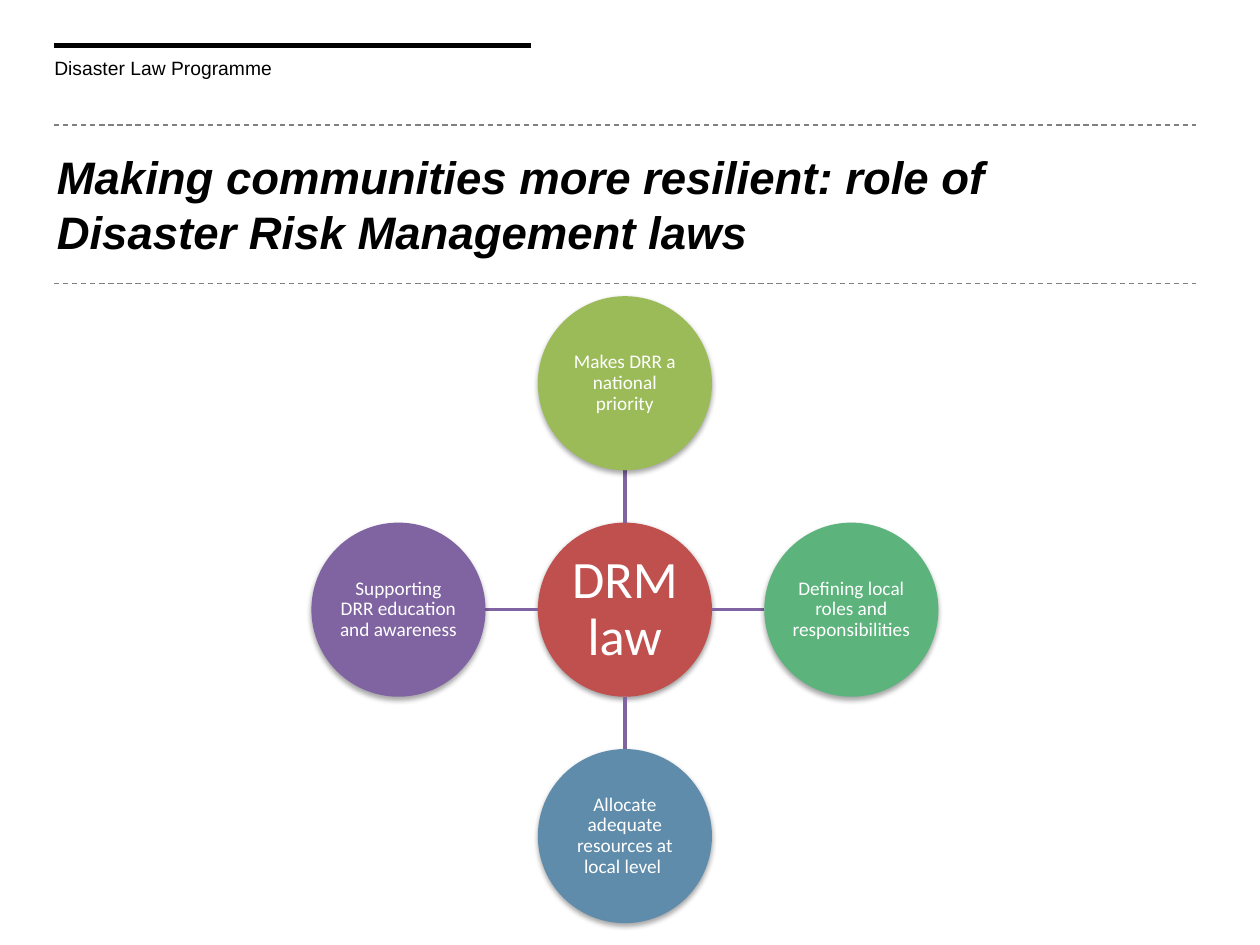
from lxml.etree import SubElement
from pptx import Presentation
from pptx.dml.color import RGBColor
from pptx.enum.dml import MSO_LINE
from pptx.enum.shapes import MSO_CONNECTOR, MSO_SHAPE
from pptx.enum.text import MSO_ANCHOR, PP_ALIGN
from pptx.oxml.ns import qn
from pptx.util import Pt

PROGRAMME = "Disaster Law Programme"
TITLE = "Making communities more resilient: role of Disaster Risk Management laws"
HUB = ("DRM law", "C0504D")
SPOKES = [
    ("Makes DRR a national priority", "9BBB59", (0, -1)),
    ("Defining local roles and responsibilities ", "5CB37C", (1, 0)),
    ("Allocate adequate resources at local level ", "608CAB", (0, 1)),
    ("Supporting DRR education and awareness", "8064A2", (-1, 0)),
]
RULES = [
    (26, 303.2, "000000", 3, None),
    (162.2, 683.3, "808080", 0.75, MSO_LINE.DASH),
    (71.4, 683.3, "808080", 0.75, MSO_LINE.DASH),
]
LEFT = 31
CENTER_X, CENTER_Y = 357.1, 348.4
DIAMETER, STEP = 99.5, 129.4


def color(value):
    """Turn a hex string into a colour."""
    return RGBColor.from_string(value)


def add_line(slide, start, end, stroke, width, dash=None):
    """Draw a straight line without a shadow."""
    line = slide.shapes.add_connector(
        MSO_CONNECTOR.STRAIGHT, *(Pt(value) for value in (*start, *end)))
    line.line.color.rgb = color(stroke)
    line.line.width = Pt(width)
    if dash is not None:
        line.line.dash_style = dash
    SubElement(line._element.spPr, qn("a:effectLst"))


def write(shape, text, size, font, ink, insets, anchor):
    """Put one styled run into a shape and return its paragraph."""
    frame = shape.text_frame
    frame.word_wrap = True
    frame.vertical_anchor = anchor
    frame.margin_left = frame.margin_right = Pt(insets[0])
    frame.margin_top = frame.margin_bottom = Pt(insets[1])
    para = frame.paragraphs[0]
    span = para.add_run()
    span.text = text
    span.font.size = Pt(size)
    span.font.name = font
    span.font.color.rgb = color(ink)
    return para


def add_shadow(shape, blur, distance, opacity):
    """Give a shape a soft shadow that falls straight down."""
    shape.shadow.inherit = False
    effects = shape._element.spPr.find(qn("a:effectLst"))
    shadow = SubElement(effects, qn("a:outerShdw"), blurRad=str(Pt(blur)),
                        dist=str(Pt(distance)), dir="5400000", rotWithShape="0")
    black = SubElement(shadow, qn("a:srgbClr"), val="000000")
    SubElement(black, qn("a:alpha"), val=str(opacity * 1000))


def add_circle(slide, x, y, text, fill, size, inset, distance, opacity):
    """Draw a labelled circle around a centre point."""
    circle = slide.shapes.add_shape(
        MSO_SHAPE.OVAL, Pt(x - DIAMETER / 2), Pt(y - DIAMETER / 2),
        Pt(DIAMETER), Pt(DIAMETER))
    circle.fill.solid()
    circle.fill.fore_color.rgb = color(fill)
    circle.line.fill.background()
    add_shadow(circle, 3.1, distance, opacity)
    para = write(circle, text, size, "Calibri", "FFFFFF", (inset, inset),
                 MSO_ANCHOR.MIDDLE)
    para.alignment = PP_ALIGN.CENTER
    para.line_spacing = 0.9


def main():
    """Build the slide and save it."""
    deck = Presentation()
    deck.slide_width, deck.slide_height = Pt(720), Pt(540)
    slide = deck.slides.add_slide(deck.slide_layouts[6])

    for y, right, stroke, width, dash in RULES:
        add_line(slide, (LEFT, y), (right, y), stroke, width, dash)

    header = slide.shapes.add_textbox(Pt(LEFT), Pt(31.9), Pt(272.2), Pt(13.7))
    write(header, PROGRAMME, 11, "Arial", "000000", (0, 0), MSO_ANCHOR.TOP)

    title = slide.shapes.add_textbox(Pt(25.4), Pt(71.4), Pt(652.3), Pt(90))
    para = write(title, TITLE, 26, "Arial", "000000", (7.2, 3.6),
                 MSO_ANCHOR.MIDDLE)
    para.runs[0].font.bold = para.runs[0].font.italic = True

    add_circle(slide, CENTER_X, CENTER_Y, *HUB, 30, 1.4, 1.6, 38)
    for text, fill, (across, down) in SPOKES:
        start, end = (
            (CENTER_X + across * reach, CENTER_Y + down * reach)
            for reach in (DIAMETER / 2, STEP - DIAMETER / 2))
        add_line(slide, start, end, "8064A2", 2)
        add_circle(slide, CENTER_X + across * STEP, CENTER_Y + down * STEP,
                   text, fill, 11, 0.7, 1.8, 35)

    deck.save("out.pptx")


if __name__ == "__main__":
    main()
